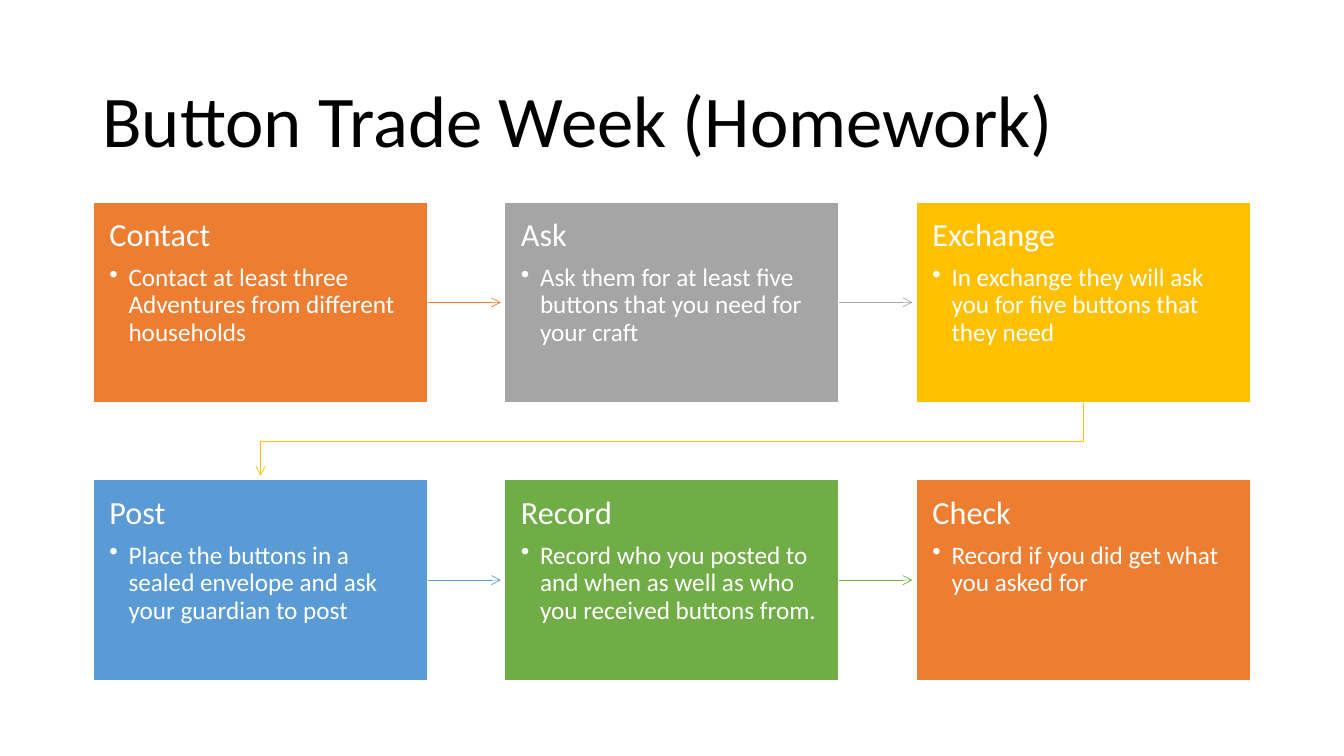
from dataclasses import dataclass

import pptx
import pptx.dml.color
import pptx.enum.shapes
import pptx.enum.text
import pptx.oxml
import pptx.oxml.ns
import pptx.util
from pptx.util import Cm, Pt

FONT = "Calibri"
WHITE = "FFFFFF"
COLUMNS = 3
LEFT, TOP = 2.35, 5.09
WIDTH, HEIGHT = 8.43, 5.06
COLUMN_STEP, ROW_STEP = 10.37, 7.0
ARROW_GAP = 0.1


@dataclass(frozen=True)
class Step:
    heading: str
    detail: str
    color: str


STEPS = [
    Step("Contact", "Contact at least three Adventures from different households", "ED7D31"),
    Step("Ask", "Ask them for at least five buttons that you need for your craft", "A5A5A5"),
    Step("Exchange", "In exchange they will ask you for five buttons that they need", "FFC000"),
    Step("Post", "Place the buttons in a sealed envelope and ask your guardian to post", "5B9BD5"),
    Step("Record", "Record who you posted to and when as well as who you received buttons from.", "70AD47"),
    Step("Check", "Record if you did get what you asked for", "ED7D31"),
]


def rgb(color: str) -> pptx.dml.color.RGBColor:
    return pptx.dml.color.RGBColor.from_string(color)


def add_xml(parent, tag: str, **attributes: str):
    child = pptx.oxml.parse_xml(f"<a:{tag} {pptx.oxml.ns.nsdecls('a')}/>")
    for name, value in attributes.items():
        child.set(name, value)
    parent.append(child)


def write(paragraph, text: str, size: float, color: str) -> None:
    paragraph.alignment = pptx.enum.text.PP_ALIGN.LEFT
    paragraph.line_spacing = 0.9
    run = paragraph.add_run()
    run.text = text
    run.font.name = FONT
    run.font.size = Pt(size)
    run.font.color.rgb = rgb(color)


def add_title(slide, text: str) -> None:
    title = slide.shapes.add_textbox(Cm(2.33), Cm(1.55), Cm(29.21), Cm(3.15))
    frame = title.text_frame
    frame.word_wrap = True
    frame.vertical_anchor = pptx.enum.text.MSO_ANCHOR.MIDDLE
    write(frame.paragraphs[0], text, 52, "000000")


def add_step(slide, step: Step, index: int):
    row, column = divmod(index, COLUMNS)
    box = slide.shapes.add_shape(
        pptx.enum.shapes.MSO_SHAPE.RECTANGLE,
        Cm(LEFT + column * COLUMN_STEP), Cm(TOP + row * ROW_STEP), Cm(WIDTH), Cm(HEIGHT),
    )
    box.shadow.inherit = False
    box.fill.solid()
    box.fill.fore_color.rgb = rgb(step.color)
    box.line.color.rgb = rgb(WHITE)
    box.line.width = Pt(1)

    frame = box.text_frame
    frame.word_wrap = True
    frame.vertical_anchor = pptx.enum.text.MSO_ANCHOR.TOP
    frame.margin_left = frame.margin_right = Cm(0.41)
    frame.margin_top = frame.margin_bottom = Cm(0.43)
    heading = frame.paragraphs[0]
    heading.space_after = Pt(8)
    write(heading, step.heading, 23, WHITE)

    detail = frame.add_paragraph()
    detail.level = 1
    properties = detail._p.get_or_add_pPr()
    properties.set("marL", str(Cm(0.48)))
    properties.set("indent", str(-Cm(0.48)))
    add_xml(properties, "buChar", char="•")
    write(detail, step.detail, 18, WHITE)
    return box


def style_arrow(arrow, color: str) -> None:
    arrow.line.color.rgb = rgb(color)
    arrow.line.width = Pt(0.5)
    add_xml(arrow.line._get_or_add_ln(), "tailEnd", type="arrow")


def add_row_arrow(slide, source, target, color: str) -> None:
    middle = source.top + source.height // 2
    arrow = slide.shapes.add_connector(
        pptx.enum.shapes.MSO_CONNECTOR.STRAIGHT,
        source.left + source.width, middle, target.left - Cm(ARROW_GAP), middle,
    )
    arrow.begin_connect(source, 3)
    style_arrow(arrow, color)
    add_xml(arrow._element.spPr, "effectLst")


def add_return_arrow(slide, source, target, color: str) -> None:
    start_x = source.left + source.width // 2
    end_x = target.left + target.width // 2
    bottom = source.top + source.height
    turn_y = (bottom + target.top) // 2
    builder = slide.shapes.build_freeform(start_x, bottom)
    builder.add_line_segments(
        [(start_x, turn_y), (end_x, turn_y), (end_x, target.top - Cm(ARROW_GAP))],
        close=False,
    )
    arrow = builder.convert_to_shape()
    arrow.shadow.inherit = False
    arrow.fill.background()
    style_arrow(arrow, color)


def main() -> None:
    deck = pptx.Presentation()
    deck.slide_width, deck.slide_height = Cm(33.87), Cm(19.05)
    slide = deck.slides.add_slide(deck.slide_layouts[6])
    add_title(slide, "Button Trade Week (Homework)")
    boxes = [add_step(slide, step, index) for index, step in enumerate(STEPS)]
    for step, source, target in zip(STEPS, boxes, boxes[1:]):
        add_arrow = add_row_arrow if source.top == target.top else add_return_arrow
        add_arrow(slide, source, target, step.color)
    deck.save("out.pptx")


if __name__ == "__main__":
    main()
